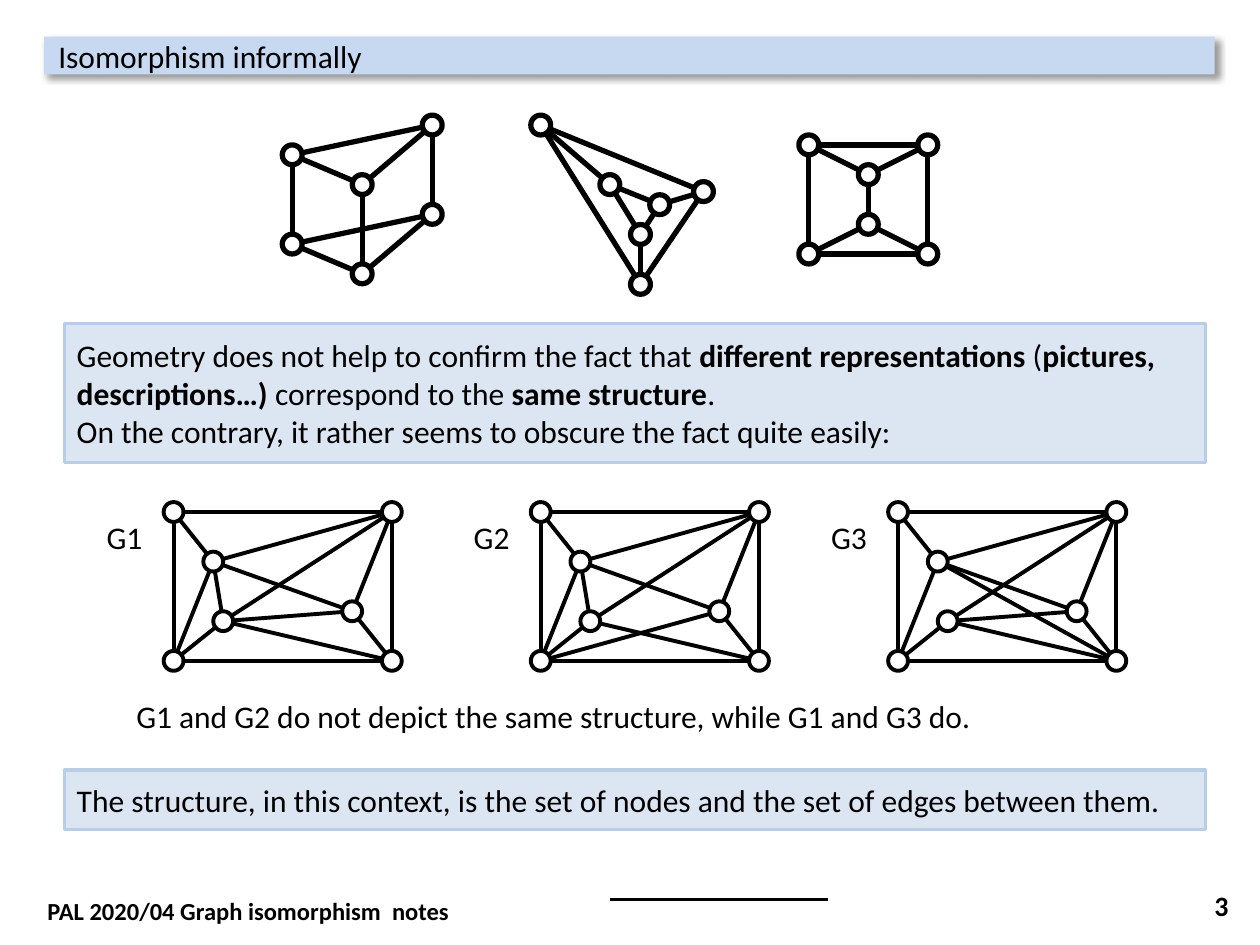
from lxml import etree
from pptx import Presentation
from pptx.dml.color import RGBColor
from pptx.enum.shapes import MSO_CONNECTOR as CONNECTOR, MSO_SHAPE as SHAPE
from pptx.enum.text import MSO_ANCHOR as ANCHOR, MSO_AUTO_SIZE as AUTO_SIZE, PP_ALIGN as ALIGN
from pptx.oxml import parse_xml
from pptx.oxml.ns import nsdecls, qn
from pptx.util import Pt

BLACK = RGBColor(0x00, 0x00, 0x00)
WHITE = RGBColor(0xFF, 0xFF, 0xFF)
TITLE_BLUE = RGBColor(0xC6, 0xD9, 0xF1)
PANEL_BLUE = RGBColor(0xDC, 0xE6, 0xF2)
PANEL_EDGE = RGBColor(0xB9, 0xCD, 0xE5)

NODE_SIZE = 11.34
GRID = 5.67

TITLE_SHADOW = f"""<a:effectLst {nsdecls('a')}>
  <a:outerShdw blurRad="{Pt(4)}" dist="{Pt(3)}" dir="2700000" algn="tl" rotWithShape="0">
    <a:srgbClr val="000000"><a:alpha val="40000"/></a:srgbClr>
  </a:outerShdw>
</a:effectLst>"""

PRISM_EDGES = [(0, 1), (1, 2), (2, 0), (3, 4), (4, 5), (5, 3), (0, 3), (1, 4), (2, 5)]
PRISMS = [
    (167, 71.5, [(0, 17), (80, 0), (40, 34), (0, 68), (80, 51), (40, 85)]),
    (309, 71.5, [(0, 0), (93, 38), (57, 91), (39.5, 34), (68, 45.5), (57, 62.5)]),
    (462.2, 82.8, [(0, 0), (68, 0), (34, 17), (0, 62.4), (68, 62.4), (34, 45.4)]),
]

TL, TR, BL, BR, P, Q, R = range(7)
FRAME_CELLS = [(0, 0), (22, 0), (0, 15), (22, 15), (4, 5), (5, 11), (18, 10)]
FRAME_NODES = [(col * GRID, row * GRID) for col, row in FRAME_CELLS]
SHARED_EDGES = [(TL, BL), (TL, P), (TR, BR), (TL, TR), (BL, P), (TR, P), (BL, Q),
                (P, R), (BL, BR), (TR, R), (BR, R), (Q, BR), (Q, TR)]
FRAMES = [
    ("G1", 99.2, [(P, Q), (Q, R)]),
    ("G2", 309, [(P, Q), (BL, R)]),
    ("G3", 513.2, [(Q, R), (P, BR)]),
]


def set_font(paragraph, size=18, bold=None):
    font = paragraph.font
    font.name, font.size, font.bold = "Calibri", Pt(size), bold
    font.color.rgb = BLACK


def add_line(slide, start, end, weight):
    line = slide.shapes.add_connector(CONNECTOR.STRAIGHT, *map(Pt, start + end))
    line.line.color.rgb = BLACK
    line.line.width = Pt(weight)
    etree.SubElement(line._element.spPr, qn("a:effectLst"))


def add_graph(slide, left, top, nodes, edges, weight):
    centres = [(left + x, top + y) for x, y in nodes]
    for first, second in edges:
        add_line(slide, centres[first], centres[second], weight)
    for x, y in centres:
        node = slide.shapes.add_shape(SHAPE.OVAL, Pt(x - NODE_SIZE / 2), Pt(y - NODE_SIZE / 2),
                                      Pt(NODE_SIZE), Pt(NODE_SIZE))
        node.shadow.inherit = False
        node.fill.solid()
        node.fill.fore_color.rgb = WHITE
        node.line.color.rgb = BLACK
        node.line.width = Pt(weight)


def add_label(slide, box, text, size=18, bold=None, align=ALIGN.LEFT, anchor=ANCHOR.TOP):
    frame = slide.shapes.add_textbox(*map(Pt, box)).text_frame
    frame.word_wrap = True
    frame.vertical_anchor = anchor
    paragraph = frame.paragraphs[0]
    paragraph.text = text
    paragraph.alignment = align
    set_font(paragraph, size, bold)


def add_title(slide, box, text):
    title = slide.shapes.title
    title.left, title.top, title.width, title.height = map(Pt, box)
    title.fill.solid()
    title.fill.fore_color.rgb = TITLE_BLUE
    title._element.spPr.append(parse_xml(TITLE_SHADOW))
    frame = title.text_frame
    frame.auto_size = AUTO_SIZE.NONE
    frame.vertical_anchor = ANCHOR.MIDDLE
    frame.margin_left = Pt(8.1)
    frame.margin_right = frame.margin_top = frame.margin_bottom = 0
    paragraph = frame.paragraphs[0]
    paragraph.text = text
    paragraph.alignment = ALIGN.LEFT
    set_font(paragraph)


def add_panel(slide, box, statements):
    panel = slide.shapes.add_shape(SHAPE.RECTANGLE, *map(Pt, box))
    panel.shadow.inherit = False
    panel.fill.solid()
    panel.fill.fore_color.rgb = PANEL_BLUE
    panel.line.color.rgb = PANEL_EDGE
    panel.line.width = Pt(2)
    frame = panel.text_frame
    frame.word_wrap = True
    frame.vertical_anchor = ANCHOR.MIDDLE
    for index, statement in enumerate(statements):
        paragraph = frame.add_paragraph() if index else frame.paragraphs[0]
        paragraph.alignment = ALIGN.LEFT
        set_font(paragraph)
        for words, bold in statement:
            run = paragraph.add_run()
            run.text = words
            run.font.bold = bold


def add_prisms(slide):
    for left, top, nodes in PRISMS:
        add_graph(slide, left, top, nodes, PRISM_EDGES, 3)


def add_frames(slide, top):
    for name, left, own_edges in FRAMES:
        add_graph(slide, left, top, FRAME_NODES, SHARED_EDGES + own_edges, 2.25)
        add_label(slide, (left - 45.4, top, 39.7, 29), name)


def add_footer(slide, left, top, width):
    add_label(slide, (left, top + 5.7, width, 24.5), "PAL 2020/04 Graph isomorphism  notes", 14, True)
    add_label(slide, (left + width + 14 - 168, top, 168, 29), "3", 16, True, ALIGN.RIGHT, ANCHOR.MIDDLE)
    add_line(slide, (348.5, top + 11.4), (473, top + 11.4), 2.25)


def main():
    deck = Presentation()
    deck.slide_width, deck.slide_height = Pt(720), Pt(540)
    slide = deck.slides.add_slide(deck.slide_layouts[5])

    add_title(slide, (25.2, 20.9, 668.9, 21.6), "Isomorphism informally")
    add_prisms(slide)
    add_panel(slide, (36.8, 185, 652.2, 79.3), [
        [("Geometry does not help to confirm the fact that ", False),
         ("different representations", True), (" (", False),
         ("pictures, descriptions…) ", True), ("correspond to the ", False),
         ("same structure", True), (".", False)],
        [("On the contrary, it rather seems to obscure the fact quite easily:", False)],
    ])
    add_frames(slide, 292.6)
    add_label(slide, (70.8, 394.7, 578.2, 29),
              "G1 and G2 do not depict the same structure, while G1 and G3 do.")
    add_panel(slide, (36.8, 440, 652.2, 34), [
        [("The structure, in this context, is the set of nodes and the set of edges between them.", False)],
    ])
    add_footer(slide, 20, 502.6, 675)
    deck.save("out.pptx")


if __name__ == "__main__":
    main()
